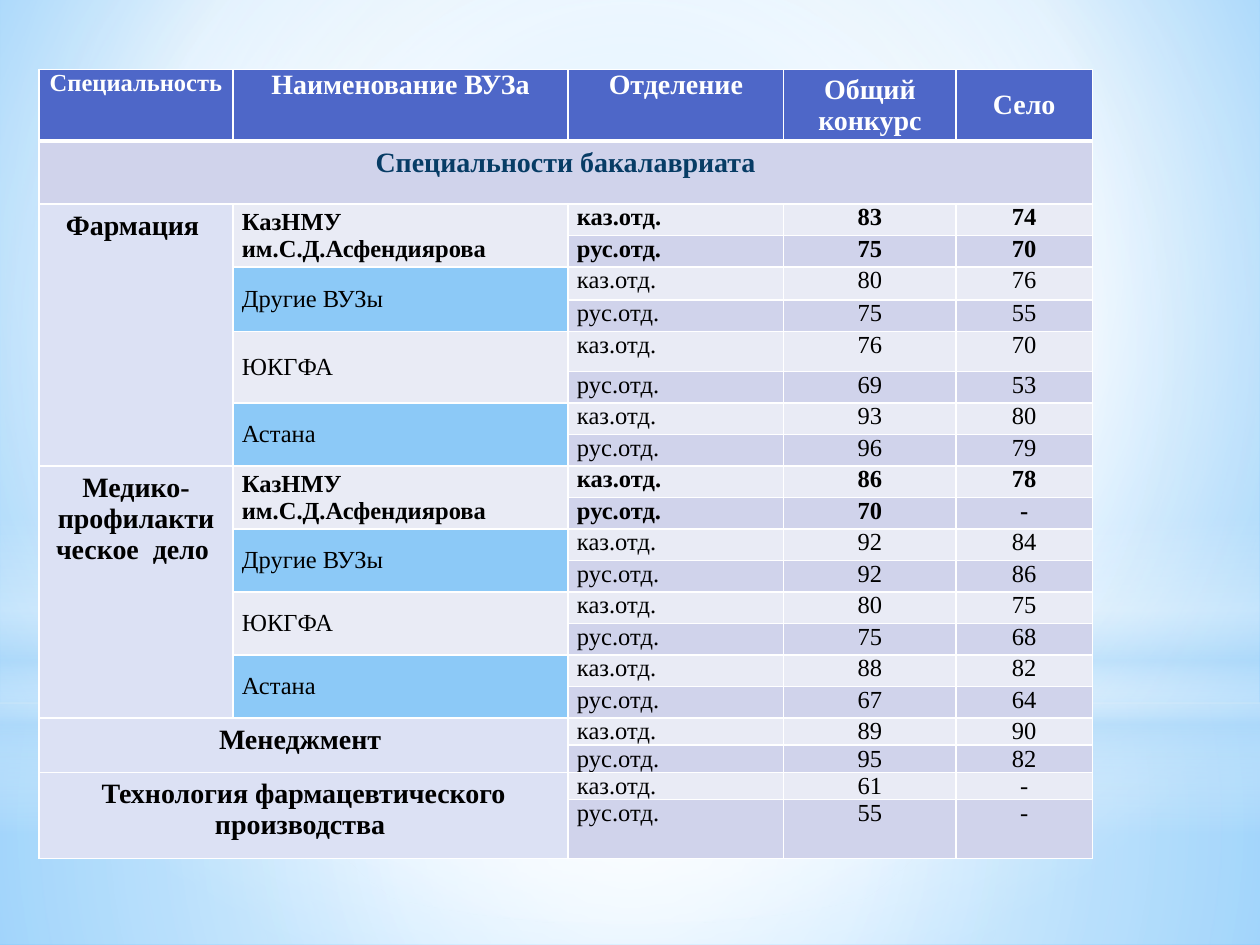
from pptx import Presentation
from pptx.dml.color import RGBColor
from pptx.enum.shapes import MSO_SHAPE as Shape
from pptx.enum.text import MSO_ANCHOR as Anchor, PP_ALIGN as Align
from pptx.oxml import parse_xml
from pptx.oxml.ns import nsdecls, qn
from pptx.util import Inches, Pt

FONT = "Times New Roman"
WHITE, BLACK, NAVY = "FFFFFF", "000000", "073C65"
HEADER, SUBJECT, SKY = "4E67C8", "DCE1F4", "8CC9F7"
BANDS = ["E9EBF5", "D0D3EB"]
HEADINGS = ["Специальность", "Наименование ВУЗа", "Отделение", "Общий конкурс", "Село"]
DIVISIONS = ["каз.отд.", "рус.отд."]
SCHOOLS = ["КазНМУ им.С.Д.Асфендиярова", "Другие ВУЗы", "ЮКГФА", "Астана"]
SUBJECTS = [
    ("Фармация ", [("83", "74"), ("75", "70"), ("80", "76"), ("75", "55"),
                   ("76", "70"), ("69", "53"), ("93", "80"), ("96", "79")]),
    ("Медико-профилакти ческое  дело ", [
        ("86", "78"), ("70", "-"), ("92", "84"), ("92", "86"),
        ("80", "75"), ("75", "68"), ("88", "82"), ("67", "64")]),
    ("Менеджмент ", [("89", "90"), ("95", "82")]),
    ("Технология фармацевтического производства ", [("61", "-"), ("55", "-")]),
]
COLUMN_WIDTHS = [1.54, 2.66, 1.71, 1.37, 1.08]
ROW_HEIGHTS = [0.57, 0.5, 0.25, 0.25, 0.26, 0.25, 0.32] + [0.25] * 11 + [0.21] * 3 + [0.47]


def color(value):
    return RGBColor.from_string(value)


def set_gradient(owner, fill, stops, direction):
    fill.solid()
    solid = next(owner.iter(qn("a:solidFill")))
    marks = "".join(
        f'<a:gs pos="{position * 1000}"><a:srgbClr val="{value}">'
        f'<a:alpha val="{alpha * 1000}"/></a:srgbClr></a:gs>'
        for position, value, alpha in stops)
    gradient = parse_xml(f'<a:gradFill {nsdecls("a")} rotWithShape="1">'
                         f'<a:gsLst>{marks}</a:gsLst>{direction}</a:gradFill>')
    solid.getparent().replace(solid, gradient)


def radial(left, top, right, bottom):
    sides = zip("ltrb", (left, top, right, bottom))
    edges = " ".join(f'{side}="{value * 1000}"' for side, value in sides)
    return f'<a:path path="circle"><a:fillToRect {edges}/></a:path>'


def add_glow(page, kind, box, stops, direction):
    glow = page.shapes.add_shape(kind, *map(Inches, box))
    glow.shadow.inherit = False
    glow.line.fill.background()
    set_gradient(glow.element, glow.fill, stops, direction)


def add_backdrop(page, width, height):
    set_gradient(page.element, page.background.fill,
                 [(0, "9ED5FF", 100), (60, WHITE, 100), (100, "5BB9FF", 100)],
                 radial(20, 10, 20, 60))
    center = radial(50, 50, 50, 50)
    mist = "B4DCFA"
    horizon = 5.58
    add_glow(page, Shape.RECTANGLE, (0, horizon, width, height - horizon),
             [(0, WHITE, 91), (37, WHITE, 76), (100, mist, 79)], center)
    add_glow(page, Shape.RECTANGLE, (0, 0, width, horizon),
             [(0, WHITE, 89), (48, WHITE, 62), (100, mist, 79)], center)
    add_glow(page, Shape.RECTANGLE, (0, 4.12, width, 2.5),
             [(0, WHITE, 0), (29, WHITE, 30), (45, mist, 40),
              (55, WHITE, 26), (65, mist, 60), (100, WHITE, 0)],
             '<a:lin ang="5400000" scaled="0"/>')
    add_glow(page, Shape.OVAL, (0, 1.75, width, horizon),
             [(0, WHITE, 100), (56, WHITE, 0)], center)


def set_borders(cell, bottom):
    properties = cell._tc.get_or_add_tcPr()
    widths = {"lnL": 1, "lnR": 1, "lnT": 1, "lnB": bottom}
    for index, (side, points) in enumerate(widths.items()):
        properties.insert(index, parse_xml(
            f'<a:{side} {nsdecls("a")} w="{Pt(points)}"><a:solidFill>'
            f'<a:srgbClr val="{WHITE}"/></a:solidFill></a:{side}>'))


def write_cell(cell, text, fill, size=14, bold=False, ink=BLACK,
               align=Align.CENTER, anchor=Anchor.TOP, tight=True):
    cell.fill.solid()
    cell.fill.fore_color.rgb = color(fill)
    cell.vertical_anchor = anchor
    if tight:
        cell.margin_left = cell.margin_right = Inches(0.07)
        cell.margin_top = cell.margin_bottom = 0
    para = cell.text_frame.paragraphs[0]
    para.alignment = align
    span = para.add_run()
    span.text = text
    span.font.name = FONT
    span.font.size = Pt(size)
    span.font.bold = bold
    span.font.color.rgb = color(ink)


def fill_subject(table, top, name, scores):
    has_schools = len(scores) > len(DIVISIONS)
    last = top + len(scores) - 1
    subject = table.cell(top, 0)
    subject.merge(table.cell(last, 0 if has_schools else 1))
    write_cell(subject, name, SUBJECT, 16, True, tight=False)
    for index, pair in enumerate(scores):
        row = top + index
        group, division = divmod(index, len(DIVISIONS))
        bold = has_schools and group == 0
        if has_schools and division == 0:
            school = table.cell(row, 1)
            school.merge(table.cell(row + 1, 1))
            write_cell(school, SCHOOLS[group], SKY if group % 2 else BANDS[0],
                       bold=bold, align=Align.LEFT, anchor=Anchor.MIDDLE)
        band = BANDS[division]
        write_cell(table.cell(row, 2), DIVISIONS[division], band, bold=bold, align=Align.LEFT)
        for column, score in enumerate(pair, 3):
            write_cell(table.cell(row, column), score, band, bold=bold)


def add_score_table(page, left, top, width, height):
    frame = page.shapes.add_table(len(ROW_HEIGHTS), len(COLUMN_WIDTHS),
                                  *map(Inches, (left, top, width, height)))
    table = frame.table
    table.first_row = table.horz_banding = False
    for column, size in zip(table.columns, COLUMN_WIDTHS):
        column.width = Inches(size)
    for row, size in zip(table.rows, ROW_HEIGHTS):
        row.height = Inches(size)
    for column, heading in enumerate(HEADINGS):
        write_cell(table.cell(0, column), heading, HEADER, 16 if column else 14, True, WHITE,
                   anchor=Anchor.MIDDLE if column > 2 else Anchor.TOP)
    section = table.cell(1, 0)
    section.merge(table.cell(1, len(HEADINGS) - 1))
    write_cell(section, "Специальности бакалавриата", BANDS[1], 16, True, NAVY, tight=False)
    first = 2
    for name, scores in SUBJECTS:
        fill_subject(table, first, name, scores)
        first += len(scores)
    for index, row in enumerate(table.rows):
        for cell in row.cells:
            set_borders(cell, 1 if index else 3)


def main():
    deck = Presentation()
    deck.slide_width, deck.slide_height = Inches(10), Inches(7.5)
    page = deck.slides.add_slide(deck.slide_layouts[6])
    add_backdrop(page, 10, 7.5)
    add_score_table(page, 0.31, 0.55, sum(COLUMN_WIDTHS), sum(ROW_HEIGHTS))
    deck.save("out.pptx")


if __name__ == "__main__":
    main()
